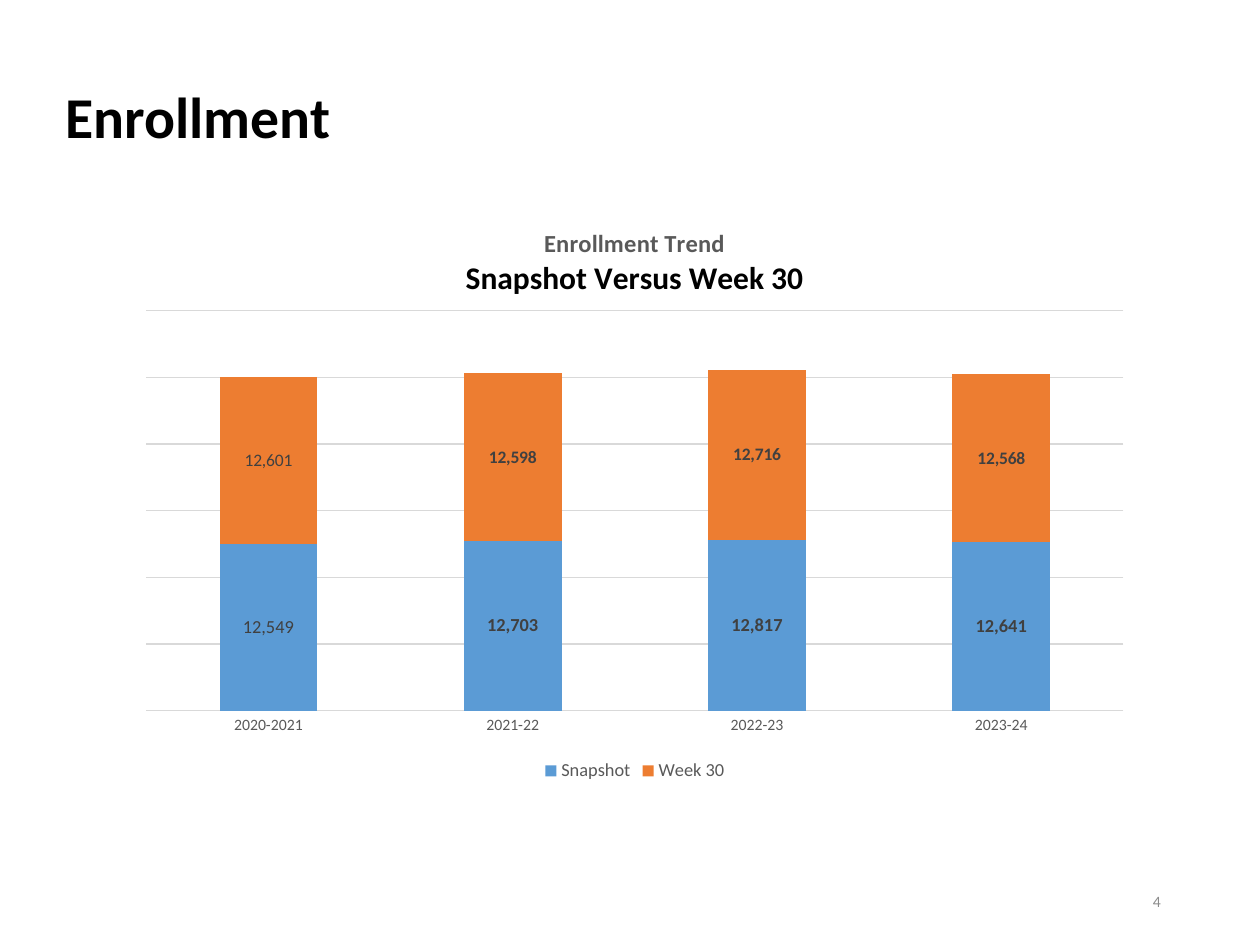
from pptx import Presentation
from pptx.chart.data import CategoryChartData
from pptx.dml.color import RGBColor
from pptx.enum.chart import XL_CHART_TYPE, XL_LABEL_POSITION, XL_LEGEND_POSITION, XL_TICK_MARK
from pptx.enum.text import MSO_ANCHOR, PP_ALIGN
from pptx.oxml import parse_xml
from pptx.oxml.ns import nsdecls
from pptx.util import Cm, Pt

STACKED = XL_CHART_TYPE.COLUMN_STACKED
CENTER = XL_LABEL_POSITION.CENTER
BOTTOM = XL_LEGEND_POSITION.BOTTOM
NO_TICK = XL_TICK_MARK.NONE
MIDDLE = MSO_ANCHOR.MIDDLE
LEFT, RIGHT = PP_ALIGN.LEFT, PP_ALIGN.RIGHT

COLORS = {"black": "000000", "gray": "595959", "label": "404040", "number": "8C8C8C",
          "grid": "D9D9D9", "blue": "5B9BD5", "orange": "ED7D31"}
YEARS = ["2020-2021", "2021-22", "2022-23", "2023-24"]
SERIES = [
    ("Snapshot", [12512, 12703, 12817, 12641], "blue", 10.5, "12,549"),
    ("Week 30", [12541, 12598, 12716, 12568], "orange", 10, "12,601"),
]
TITLE_LINES = [("Enrollment Trend", 14, "gray"), ("Snapshot Versus Week 30", 18, "black")]


class Deck:
    """Holds the style and the current slide, and adds each kind of element."""

    def __init__(self, prs, font="Calibri"):
        self.font = font
        self.s = prs.slides.add_slide(prs.slide_layouts[6])

    def style(self, font, size, color, bold=False):
        font.name, font.size, font.bold = self.font, Pt(size), bold
        font.color.rgb = RGBColor.from_string(COLORS[color])

    def run(self, p, text, size, color, bold=False):
        r = p.add_run()
        r.text = text
        self.style(r.font, size, color, bold)

    def line(self, line):
        line.width = Pt(0.75)
        line.color.rgb = RGBColor.from_string(COLORS["grid"])

    def text(self, box, text, size, color, bold=False, align=LEFT):
        tf = self.s.shapes.add_textbox(*map(Cm, box)).text_frame
        tf.word_wrap = True
        tf.vertical_anchor = MIDDLE
        p = tf.paragraphs[0]
        p.alignment = align
        self.run(p, text, size, color, bold)

    def layout(self, parent, inner=False, **fractions):
        target = '<c:layoutTarget val="inner"/>' if inner else ""
        modes = "".join(f'<c:{k}Mode val="edge"/>' for k in ("x", "y"))
        values = "".join(f'<c:{k} val="{v}"/>' for k, v in fractions.items())
        for old in parent.findall("./{*}layout"):
            parent.remove(old)
        return parse_xml(f'<c:layout {nsdecls("c")}><c:manualLayout>{target}{modes}{values}'
                         '</c:manualLayout></c:layout>')

    def chart_title(self, chart, lines):
        tf = chart.chart_title.text_frame
        for i, (text, size, color) in enumerate(lines):
            p = tf.add_paragraph() if i else tf.paragraphs[0]
            self.run(p, text, size, color, True)
        title = chart.chart_title._element
        title.find("./{*}tx").addnext(self.layout(title, x=0.33, y=0.04))
        chart.chart_title.include_in_layout = False

    def axes(self, chart):
        cat, val = chart.category_axis, chart.value_axis
        cat.major_tick_mark = cat.minor_tick_mark = NO_TICK
        self.style(cat.tick_labels.font, 9, "gray")
        self.line(cat.format.line)
        val.minimum_scale, val.maximum_scale, val.major_unit = 0, 30000, 5000
        val.has_major_gridlines = True
        self.line(val.major_gridlines.format.line)
        val.visible = False

    def labels(self, ser, size, first):
        labels = ser.data_labels
        labels.show_value = True
        labels.number_format, labels.number_format_is_linked = "#,##0", False
        labels.position = CENTER
        self.style(labels.font, size, "label", True)
        label = ser.points[0].data_label
        self.run(label.text_frame.paragraphs[0], first, size, "label")
        label.position = CENTER

    def chart(self, box, cats, series, lines):
        data = CategoryChartData(number_format="#,##0")
        data.categories = cats
        for name, values, *_ in series:
            data.add_series(name, values)
        chart = self.s.shapes.add_chart(STACKED, *map(Cm, box), data).chart
        self.style(chart.font, 10, "black")
        self.chart_title(chart, lines)
        self.axes(chart)
        plot = chart.plots[0]
        plot.gap_width, plot.overlap, plot.vary_by_categories = 150, 100, False
        for ser, (_, _, color, size, first) in zip(plot.series, series):
            ser.format.fill.solid()
            ser.format.fill.fore_color.rgb = RGBColor.from_string(COLORS[color])
            self.labels(ser, size, first)
        area = chart._chartSpace.chart.plotArea
        area.insert(0, self.layout(area, True, x=0.02, y=0.19, w=0.96, h=0.68))
        chart.has_legend = True
        chart.legend.position = BOTTOM
        chart.legend.include_in_layout = False
        self.style(chart.legend.font, 10.5, "gray")


def main():
    prs = Presentation()
    prs.slide_width, prs.slide_height = Cm(25.4), Cm(19.05)
    deck = Deck(prs)
    deck.text((1.07, 1.47, 22.73, 1.7), "Enrollment", 33, "black", True)
    deck.chart((2.54, 4.01, 20.52, 11.86), YEARS, SERIES, TITLE_LINES)
    deck.text((17.93, 17.65, 5.72, 1.02), "4", 9, "number", align=RIGHT)
    prs.save("out.pptx")


if __name__ == "__main__":
    main()
